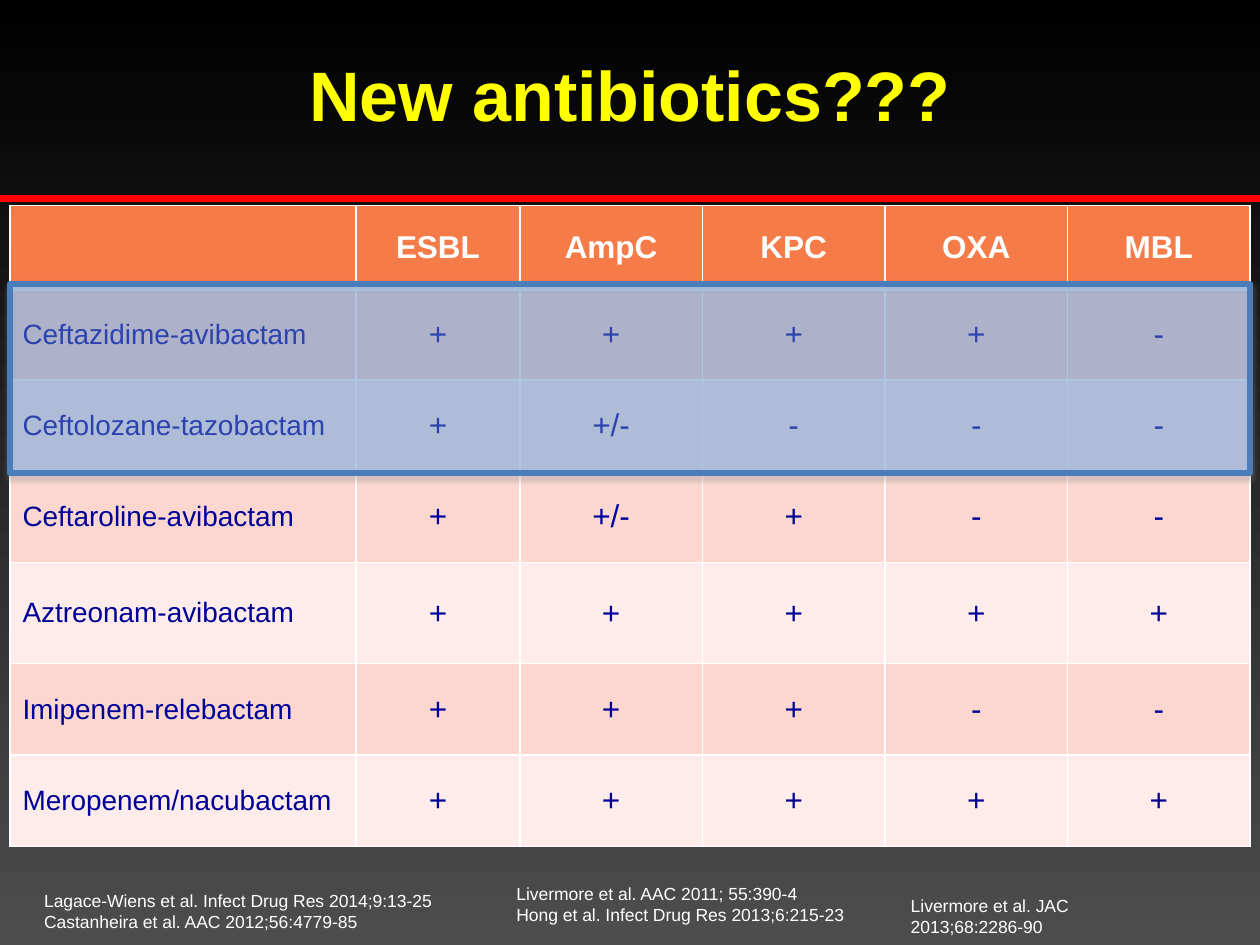
from dataclasses import dataclass
from lxml import etree
from pptx import Presentation
from pptx.dml.color import RGBColor as Rgb
from pptx.enum.shapes import MSO_CONNECTOR as Link, MSO_SHAPE as Preset
from pptx.enum.text import MSO_ANCHOR as Anchor, PP_ALIGN as Align
from pptx.oxml import parse_xml
from pptx.oxml.ns import nsdecls, qn
from pptx.util import Cm, Pt


@dataclass(frozen=True)
class Theme:
    font: str = "Arial"
    backdrop: tuple = ("000000", "4D4D4D")
    title: str = "FFFF00"
    rule: str = "FF0000"
    light: str = "FFFFFF"
    ink: str = "000099"
    header: str = "F57B49"
    bands: tuple = ("FBD7D0", "FDECE9")
    highlight: str = "558ED5"
    highlight_edge: str = "4A7EBB"
    title_size: int = 40
    mark_size: int = 18
    drug_size: int = 16
    citation_size: int = 10


THEME = Theme()
WIDTH, HEIGHT = 25.4, 19.05

TITLE = "New antibiotics???"
ENZYMES = ["", "ESBL", "AmpC", "KPC", "OXA", "MBL"]
ACTIVITY = [
    ("Ceftazidime-avibactam", "+", "+", "+", "+", "-"),
    ("Ceftolozane-tazobactam", "+", "+/-", "-", "-", "-"),
    ("Ceftaroline-avibactam", "+", "+/-", "+", "-", "-"),
    ("Aztreonam-avibactam", "+", "+", "+", "+", "+"),
    ("Imipenem-relebactam", "+", "+", "+", "-", "-"),
    ("Meropenem/nacubactam", "+", "+", "+", "+", "+"),
]
# left, top, width, height in cm, then the lines
CITATIONS = [
    (0.64, 17.81, 10.59, 1.12, ["Lagace-Wiens et al. Infect Drug Res 2014;9:13-25",
                                "Castanheira et al. AAC 2012;56:4779-85"]),
    (10.16, 17.68, 7.6, 1.12, ["Livermore et al. AAC 2011; 55:390-4",
                               "Hong et al. Infect Drug Res 2013;6:215-23"]),
    (18.11, 17.91, 4.2, 1.12, ["Livermore et al. JAC 2013;68:2286-90"]),
]

TABLE_LEFT, TABLE_TOP = 0.2, 4.14
COLUMNS = [6.98, 3.3] + [3.68] * 4
ROWS = [1.68, 1.84, 1.84, 1.84, 2.04, 1.84, 1.84]


def write(frame, lines, size, color, bold=False, align=Align.LEFT):
    frame.word_wrap = True
    for index, line in enumerate(lines):
        paragraph = frame.paragraphs[0] if index == 0 else frame.add_paragraph()
        paragraph.alignment = align
        run = paragraph.add_run()
        run.text = line
        run.font.name, run.font.size, run.font.bold = THEME.font, Pt(size), bold
        run.font.color.rgb = Rgb.from_string(color)


def add_text(slide, box, lines, size, color, **style):
    frame = slide.shapes.add_textbox(*map(Cm, box)).text_frame
    write(frame, lines, size, color, **style)
    return frame


def paint_background(slide):
    fill = slide.background.fill
    fill.gradient()
    fill.gradient_angle = 270  # counter-clockwise: runs top to bottom
    for stop, color in zip(fill.gradient_stops, THEME.backdrop):
        stop.color.rgb = Rgb.from_string(color)


def add_rule(slide):
    y = Cm(4.01)
    rule = slide.shapes.add_connector(Link.STRAIGHT, 0, y, Cm(WIDTH), y)
    rule.line.color.rgb = Rgb.from_string(THEME.rule)
    rule.line.width = Pt(4)
    etree.SubElement(rule._element.spPr, qn("a:effectLst"))


def set_borders(cell, bottom):
    widths = {"lnL": 1, "lnR": 1, "lnT": 1, "lnB": bottom}
    for index, (side, points) in enumerate(widths.items()):
        cell._tc.get_or_add_tcPr().insert(index, parse_xml(
            f'<a:{side} {nsdecls("a")} w="{Pt(points)}"><a:solidFill>'
            f'<a:srgbClr val="{THEME.light}"/></a:solidFill></a:{side}>'))


def add_activity_table(slide):
    table = slide.shapes.add_table(
        len(ROWS), len(COLUMNS), Cm(TABLE_LEFT), Cm(TABLE_TOP),
        Cm(sum(COLUMNS)), Cm(sum(ROWS))).table
    for column, width in zip(table.columns, COLUMNS):
        column.width = Cm(width)
    for row, height in zip(table.rows, ROWS):
        row.height = Cm(height)
    for r, entries in enumerate([ENZYMES, *ACTIVITY]):
        is_header = r == 0
        band = THEME.header if is_header else THEME.bands[(r - 1) % 2]
        for c, entry in enumerate(entries):
            cell = table.cell(r, c)
            cell.vertical_anchor = Anchor.MIDDLE
            cell.fill.solid()
            cell.fill.fore_color.rgb = Rgb.from_string(band)
            set_borders(cell, bottom=3 if is_header else 1)
            if entry:
                is_drug = c == 0
                write(cell.text_frame, [entry],
                      THEME.drug_size if is_drug else THEME.mark_size,
                      THEME.light if is_header else THEME.ink, bold=is_header,
                      align=Align.LEFT if is_drug else Align.CENTER)


def add_highlight(slide):
    """Lay a translucent frame with a soft shadow over the first two drugs."""
    frame = slide.shapes.add_shape(
        Preset.RECTANGLE, Cm(TABLE_LEFT), Cm(5.72), Cm(sum(COLUMNS)), Cm(3.81))
    frame.fill.solid()
    frame.fill.fore_color.rgb = Rgb.from_string(THEME.highlight)
    tint = frame._element.spPr.find(qn("a:solidFill"))[0]
    etree.SubElement(tint, qn("a:alpha"), val="40000")
    frame.line.color.rgb = Rgb.from_string(THEME.highlight_edge)
    frame.line.width = Pt(3.25)
    frame._element.spPr.append(parse_xml(
        f'<a:effectLst {nsdecls("a")}><a:outerShdw blurRad="{Pt(3.1)}" '
        f'dist="{Pt(1.8)}" dir="5400000" rotWithShape="0"><a:srgbClr val="808080">'
        '<a:alpha val="35000"/></a:srgbClr></a:outerShdw></a:effectLst>'))


def main():
    deck = Presentation()
    deck.slide_width, deck.slide_height = Cm(WIDTH), Cm(HEIGHT)
    slide = deck.slides.add_slide(deck.slide_layouts[6])
    paint_background(slide)
    add_rule(slide)
    heading = add_text(slide, (0, 0.74, WIDTH, 2.29), [TITLE], THEME.title_size,
                       THEME.title, bold=True, align=Align.CENTER)
    heading.vertical_anchor = Anchor.MIDDLE
    add_activity_table(slide)
    for *box, lines in CITATIONS:
        add_text(slide, box, lines, THEME.citation_size, THEME.light)
    add_highlight(slide)
    deck.save("out.pptx")


if __name__ == "__main__":
    main()
